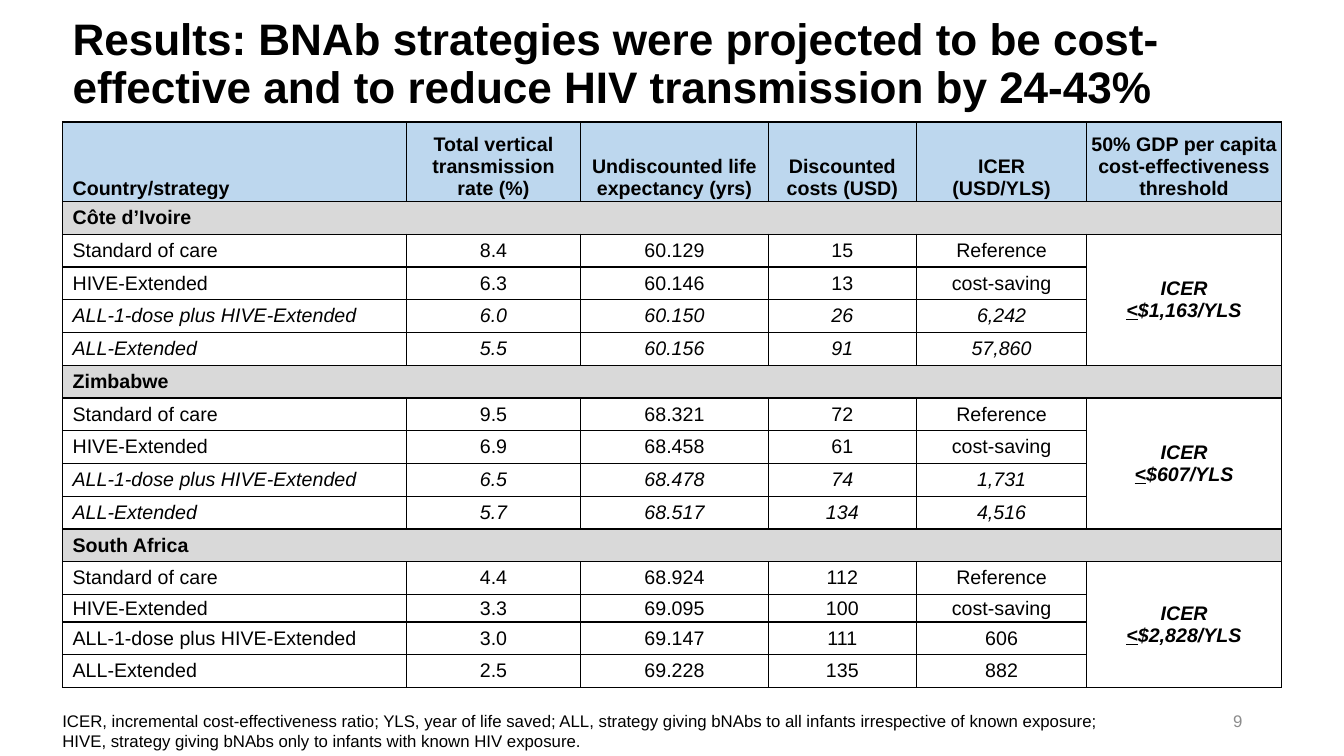
from pptx import Presentation
from pptx.dml.color import RGBColor
from pptx.enum.text import MSO_ANCHOR as Anchor, MSO_AUTO_SIZE as AutoSize, PP_ALIGN as Align
from pptx.oxml.ns import qn
from pptx.util import Inches, Pt
from lxml.etree import SubElement

BLACK = RGBColor(0x00, 0x00, 0x00)
GREY = RGBColor(0x8C, 0x8C, 0x8C)
HEADER_BLUE = RGBColor(0xBD, 0xD7, 0xEE)
COUNTRY_GREY = RGBColor(0xD9, 0xD9, 0xD9)

TITLE = ("Results: BNAb strategies were projected to be cost-effective "
         "and to reduce HIV transmission by 24-43%")
FOOTNOTE = (
    "ICER, incremental cost-effectiveness ratio; YLS, year of life saved; ALL, strategy "
    "giving bNAbs to all infants irrespective of known exposure;\n"
    "HIVE, strategy giving bNAbs only to infants with known HIV exposure."
)
HEADERS = [
    "Country/strategy",
    "Total vertical transmission\nrate (%)",
    "Undiscounted life expectancy (yrs)",
    "Discounted costs (USD)",
    "ICER\n(USD/YLS)",
    "50% GDP per capita cost-effectiveness threshold",
]
STRATEGIES = ["Standard of care", "HIVE-Extended",
              "ALL-1-dose plus HIVE-Extended", "ALL-Extended"]
COUNTRIES = [
    ("Côte d’Ivoire", "$1,163/YLS", True, [
        ("8.4", "60.129", "15", "Reference"),
        ("6.3", "60.146", "13", "cost-saving"),
        ("6.0", "60.150", "26", "6,242"),
        ("5.5", "60.156", "91", "57,860")]),
    ("Zimbabwe", "$607/YLS", True, [
        ("9.5", "68.321", "72", "Reference"),
        ("6.9", "68.458", "61", "cost-saving"),
        ("6.5", "68.478", "74", "1,731"),
        ("5.7", "68.517", "134", "4,516")]),
    ("South Africa", "$2,828/YLS", False, [
        ("4.4", "68.924", "112", "Reference"),
        ("3.3", "69.095", "100", "cost-saving"),
        ("3.0", "69.147", "111", "606"),
        ("2.5", "69.228", "135", "882")]),
]
COLUMN_WIDTHS = [3.41, 1.73, 1.86, 1.47, 1.69, 1.93]
HEADER_HEIGHT, ROW_HEIGHT, SHORT_HEIGHT = 0.79, 0.325, 0.26
SHORT_ROW = 13


def write_text(frame, text, size=14, color=BLACK, bold=False, italic=False,
               align=Align.LEFT, spacing=None, underlined=None):
    for number, line in enumerate(text.split("\n")):
        paragraph = frame.add_paragraph() if number else frame.paragraphs[0]
        paragraph.alignment = align
        if spacing:
            paragraph.line_spacing = spacing
        pieces = line.partition(underlined) if underlined else [line]
        for piece in filter(None, pieces):
            run = paragraph.add_run()
            run.text = piece
            font = run.font
            font.name, font.size = "Arial", Pt(size)
            font.bold, font.italic = bold, italic
            font.color.rgb = color
            if piece == underlined:
                font.underline = True


def place(part, left, top, width, height):
    part.left, part.top = Inches(left), Inches(top)
    part.width, part.height = Inches(width), Inches(height)


def add_title(slide, left, top, width, height):
    title = slide.shapes.title
    place(title, left, top, width, height)
    frame = title.text_frame
    frame.word_wrap = True
    frame.auto_size = AutoSize.NONE
    frame.vertical_anchor = Anchor.MIDDLE
    write_text(frame, TITLE, size=31.5, bold=True, spacing=0.9)


def add_caption(slide, left, top, width, height, text, wrap=True,
                anchor=Anchor.TOP, **text_format):
    caption = slide.shapes.add_textbox(
        Inches(left), Inches(top), Inches(width), Inches(height))
    frame = caption.text_frame
    frame.word_wrap = wrap
    frame.vertical_anchor = anchor
    write_text(frame, text, **text_format)


def style_cell(cell, column, fill=None):
    properties = cell._tc.get_or_add_tcPr()
    for edge in ("a:lnL", "a:lnR", "a:lnT", "a:lnB"):
        border = SubElement(properties, qn(edge), w=str(Pt(1)))
        SubElement(SubElement(border, qn("a:solidFill")), qn("a:srgbClr"), val=str(BLACK))
    if fill:
        cell.fill.solid()
        cell.fill.fore_color.rgb = fill
    else:
        cell.fill.background()
    cell.margin_left = Inches(0.02 if column else 0.1)
    cell.margin_right = cell.margin_top = cell.margin_bottom = Inches(0.02)
    cell.vertical_anchor = Anchor.MIDDLE


def add_country(table, top_row, country, threshold, italic_all, results):
    last_column = len(COLUMN_WIDTHS) - 1
    for column in range(last_column + 1):
        style_cell(table.cell(top_row, column), column, COUNTRY_GREY)
    heading = table.cell(top_row, 0)
    heading.merge(table.cell(top_row, last_column))
    write_text(heading.text_frame, country, bold=True)

    for offset, (strategy, values) in enumerate(zip(STRATEGIES, results)):
        row = top_row + 1 + offset
        italic = italic_all and strategy.startswith("ALL")
        for column, value in enumerate([strategy, *values]):
            cell = table.cell(row, column)
            style_cell(cell, column)
            write_text(cell.text_frame, value, italic=italic,
                       align=Align.CENTER if column else Align.LEFT)
        style_cell(table.cell(row, last_column), last_column)

    limit = table.cell(top_row + 1, last_column)
    limit.merge(table.cell(top_row + len(results), last_column))
    write_text(limit.text_frame, f"ICER\n<{threshold}", bold=True, italic=True,
               align=Align.CENTER, underlined="<")


def add_results(slide, left, top):
    block = 1 + len(STRATEGIES)
    heights = [HEADER_HEIGHT] + [ROW_HEIGHT] * (block * len(COUNTRIES))
    heights[SHORT_ROW] = SHORT_HEIGHT
    table = slide.shapes.add_table(
        len(heights), len(COLUMN_WIDTHS), Inches(left), Inches(top),
        Inches(sum(COLUMN_WIDTHS)), Inches(sum(heights))).table
    table.horz_banding = False
    table.first_row = False
    for column, width in zip(table.columns, COLUMN_WIDTHS):
        column.width = Inches(width)
    for row, height in zip(table.rows, heights):
        row.height = Inches(height)

    for column, header in enumerate(HEADERS):
        cell = table.cell(0, column)
        style_cell(cell, column, HEADER_BLUE)
        cell.vertical_anchor = Anchor.BOTTOM
        write_text(cell.text_frame, header, bold=True,
                   align=Align.CENTER if column else Align.LEFT)
    for number, country in enumerate(COUNTRIES):
        add_country(table, 1 + number * block, *country)


def main():
    deck = Presentation()
    deck.slide_width, deck.slide_height = Inches(13.33), Inches(7.5)
    slide = deck.slides.add_slide(deck.slide_layouts[5])
    add_title(slide, 0.62, 0.17, 11.8, 0.96)
    add_caption(slide, 9.42, 6.95, 3, 0.4, "9", anchor=Anchor.MIDDLE,
                size=12, color=GREY, align=Align.RIGHT)
    add_results(slide, 0.62, 1.21)
    add_caption(slide, 0.52, 7, 10.61, 0.5, FOOTNOTE, wrap=False, size=12)
    deck.save("out.pptx")


if __name__ == "__main__":
    main()
